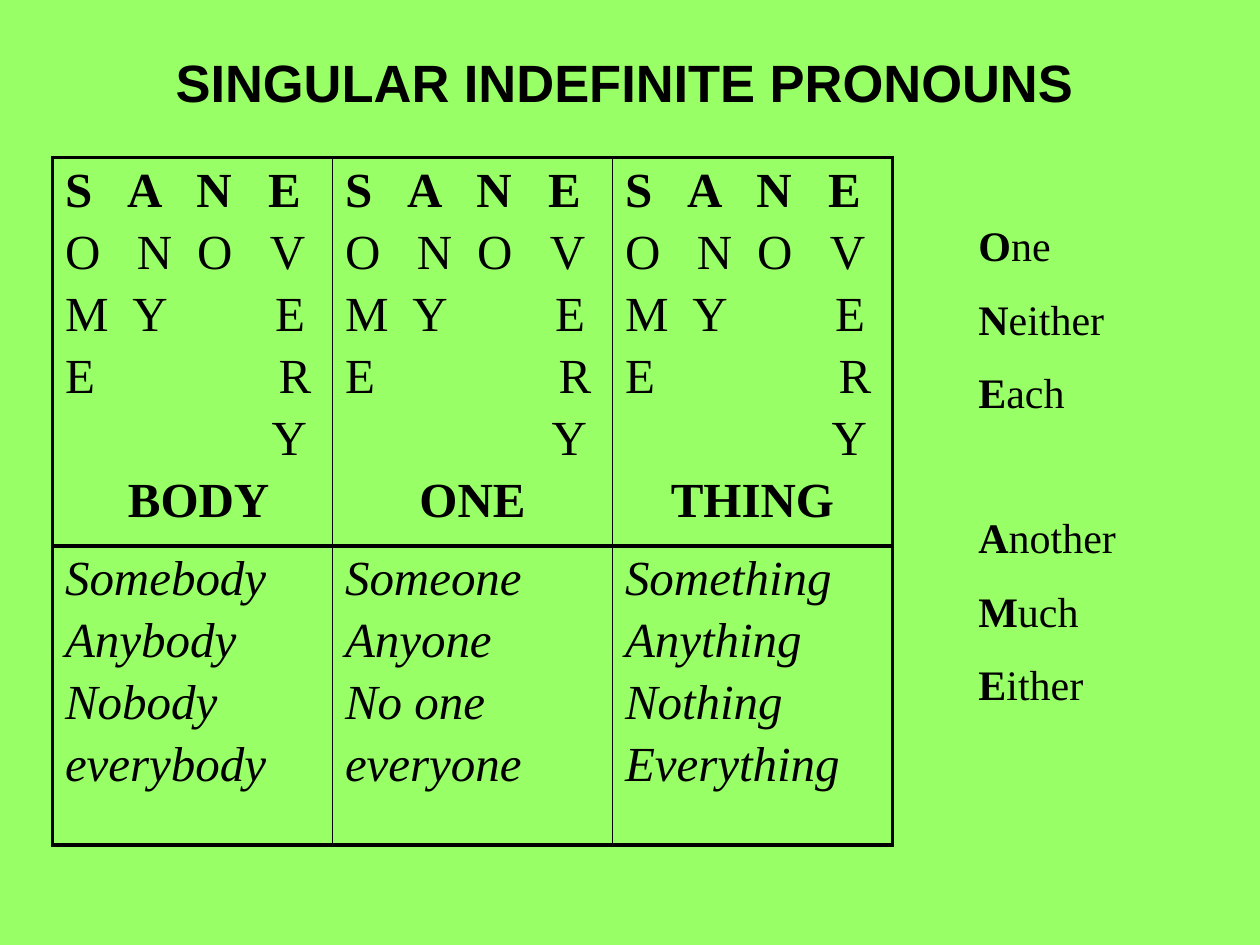
from lxml import etree
from pptx import Presentation
from pptx.dml.color import RGBColor
from pptx.enum.text import MSO_ANCHOR, PP_ALIGN
from pptx.oxml.ns import qn
from pptx.util import Pt

LEFT, CENTER = PP_ALIGN.LEFT, PP_ALIGN.CENTER
TOP = MSO_ANCHOR.TOP
GREEN = RGBColor(0x99, 0xFF, 0x66)
BLACK = RGBColor(0, 0, 0)
SANS, SERIF = "Arial", "Times New Roman"
TITLE_ONLY = 5

THIN, OUTER, DIVIDER = 1, 2.25, 3
ROW_HEIGHTS = (222, 171)

# Each letter row pairs its tabbed letters with the tab stops that place them.
LETTER_ROWS = (
    ("S\tA\tN\tE", (35.5, 75, 116)),
    ("O\tN\tO\tV", (41, 75.5, 117)),
    ("M\tY\tE", (38.5, 120)),
    ("E\tR", (122,)),
    ("\tY", (118,)),
)
PRONOUNS = (
    (" BODY", ("Somebody", "Anybody", "Nobody", "everybody")),
    ("ONE", ("Someone", "Anyone", "No one", "everyone")),
    ("THING", ("Something", "Anything", "Nothing", "Everything")),
)
SIDE_GROUPS = (("One", "Neither", "Each"), ("Another", "Much", "Either"))


def style_paragraph(paragraph, name, size, bold=False, italic=False, align=LEFT, before=0):
    """Set the font, alignment and leading space of a paragraph."""
    font = paragraph.font
    font.name, font.size, font.bold, font.italic = name, Pt(size), bold, italic
    font.color.rgb = BLACK
    paragraph.alignment = align
    paragraph.space_before = Pt(before)


def next_paragraph(text_frame, index):
    """Return the first paragraph of a frame, or a new one after it."""
    return text_frame.add_paragraph() if index else text_frame.paragraphs[0]


def set_tab_stops(paragraph, stops):
    """Give a paragraph left tab stops, in points."""
    properties = paragraph._p.get_or_add_pPr()
    tab_list = etree.SubElement(properties, qn("a:tabLst"))
    for stop in stops:
        etree.SubElement(tab_list, qn("a:tab"), pos=str(Pt(stop)), algn="l")
    defaults = properties.find(qn("a:defRPr"))
    if defaults is not None:
        defaults.addprevious(tab_list)


def set_borders(cell, widths):
    """Draw black cell borders in the order left, right, top, bottom."""
    properties = cell._tc.get_or_add_tcPr()
    for side, width in zip(("L", "R", "T", "B"), widths):
        line = etree.SubElement(properties, qn(f"a:ln{side}"), w=str(Pt(width)))
        fill = etree.SubElement(line, qn("a:solidFill"))
        etree.SubElement(fill, qn("a:srgbClr"), val=str(BLACK))


def add_title(slide, left, top, width, height):
    """Place and format the slide title."""
    title = slide.shapes.title
    title.left, title.top, title.width, title.height = map(Pt, (left, top, width, height))
    title.text_frame.text = "SINGULAR INDEFINITE PRONOUNS"
    title.text_frame.vertical_anchor = TOP
    style_paragraph(title.text_frame.paragraphs[0], SANS, 30, bold=True, align=CENTER)


def fill_letter_cell(cell, ending):
    """Write the SANE letter grid and the ending below it."""
    rows = LETTER_ROWS + ((ending, ()),)
    for index, (text, stops) in enumerate(rows):
        paragraph = next_paragraph(cell.text_frame, index)
        paragraph.text = text
        is_ending = text == ending
        style_paragraph(paragraph, SERIF, 28, bold=index == 0 or is_ending,
                        align=CENTER if is_ending else LEFT, before=4.4 if index else 0)
        if stops:
            set_tab_stops(paragraph, stops)


def fill_word_cell(cell, words):
    """Write the pronouns formed with one ending."""
    for index, word in enumerate(words):
        paragraph = next_paragraph(cell.text_frame, index)
        paragraph.text = word
        style_paragraph(paragraph, SERIF, 28, italic=True, before=4.4 if index else 0)


def add_pronoun_table(slide, left, top, width):
    """Add the table of prefixes, endings and pronouns."""
    count = len(PRONOUNS)
    frame = slide.shapes.add_table(2, count, Pt(left), Pt(top), Pt(width), Pt(sum(ROW_HEIGHTS)))
    table = frame.table
    table.first_row = table.horz_banding = False
    for row, height in zip(table.rows, ROW_HEIGHTS):
        row.height = Pt(height)
    for column, (ending, words) in enumerate(PRONOUNS):
        table.columns[column].width = Pt(width / count)
        fill_letter_cell(table.cell(0, column), ending)
        fill_word_cell(table.cell(1, column), words)
        sides = (OUTER if column == 0 else THIN, OUTER if column == count - 1 else THIN)
        for row, edges in enumerate(((OUTER, DIVIDER), (DIVIDER, OUTER))):
            cell = table.cell(row, column)
            set_borders(cell, sides + edges)
            cell.fill.background()


def add_side_list(slide, left, top, width, height):
    """Add the other pronouns in two groups with bold initials."""
    box = slide.shapes.add_textbox(Pt(left), Pt(top), Pt(width), Pt(height))
    box.text_frame.word_wrap = True
    for group_index, group in enumerate(SIDE_GROUPS):
        for index, word in enumerate(group):
            paragraph = next_paragraph(box.text_frame, group_index + index)
            before = 13.2 if index else 54 * group_index
            style_paragraph(paragraph, SERIF, 24, before=before)
            for text, bold in ((word[0], True), (word[1:], False)):
                run = paragraph.add_run()
                run.text = text
                run.font.bold = bold


def main():
    """Build and save the presentation."""
    presentation = Presentation()
    presentation.slide_width, presentation.slide_height = Pt(720), Pt(540)
    slide = presentation.slides.add_slide(presentation.slide_layouts[TITLE_ONLY])
    slide.background.fill.solid()
    slide.background.fill.fore_color.rgb = GREEN
    add_title(slide, 54, 25, 606, 43)
    add_pronoun_table(slide, 30, 90, 480)
    add_side_list(slide, 552, 122, 114, 337)
    presentation.save("out.pptx")


if __name__ == "__main__":
    main()
